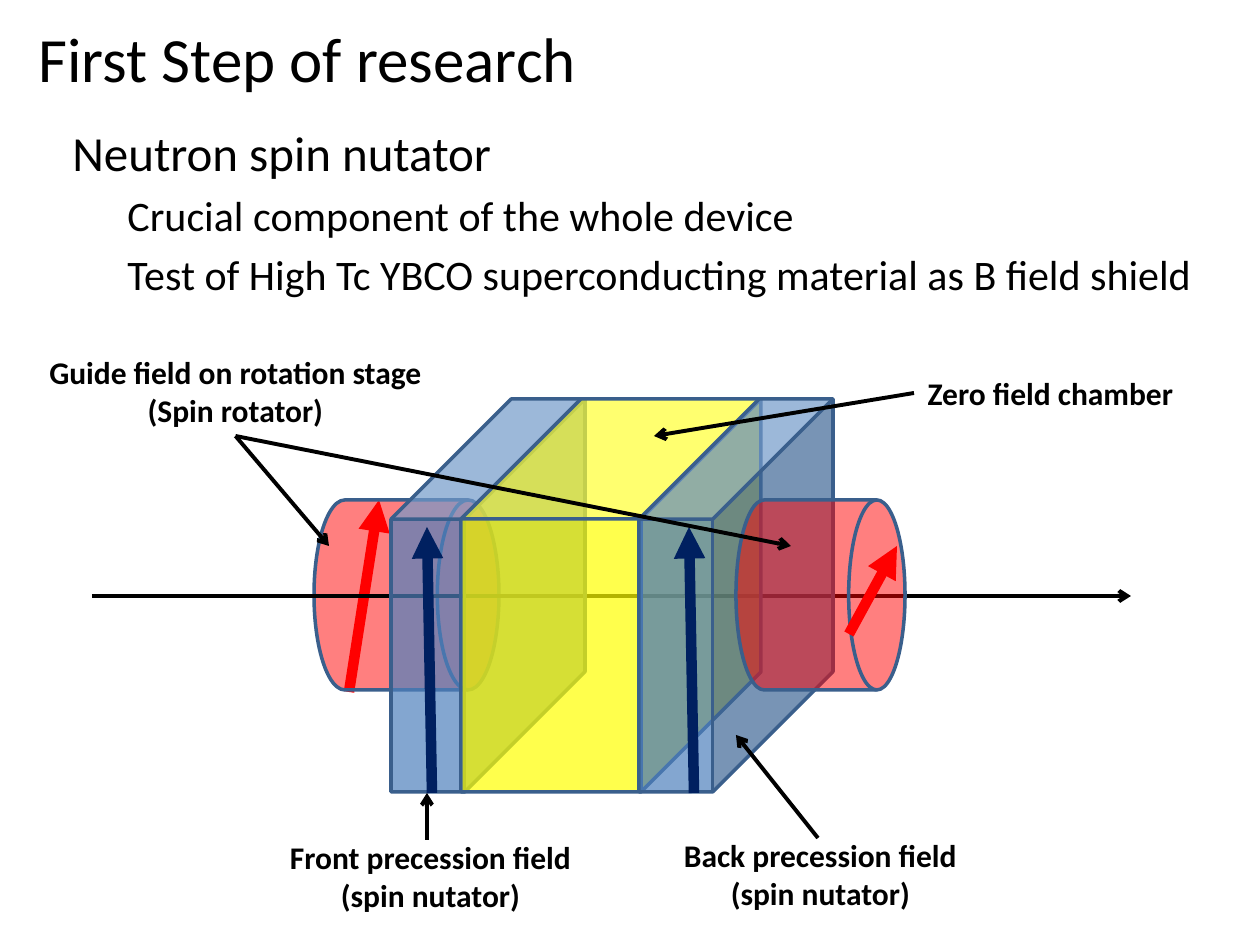
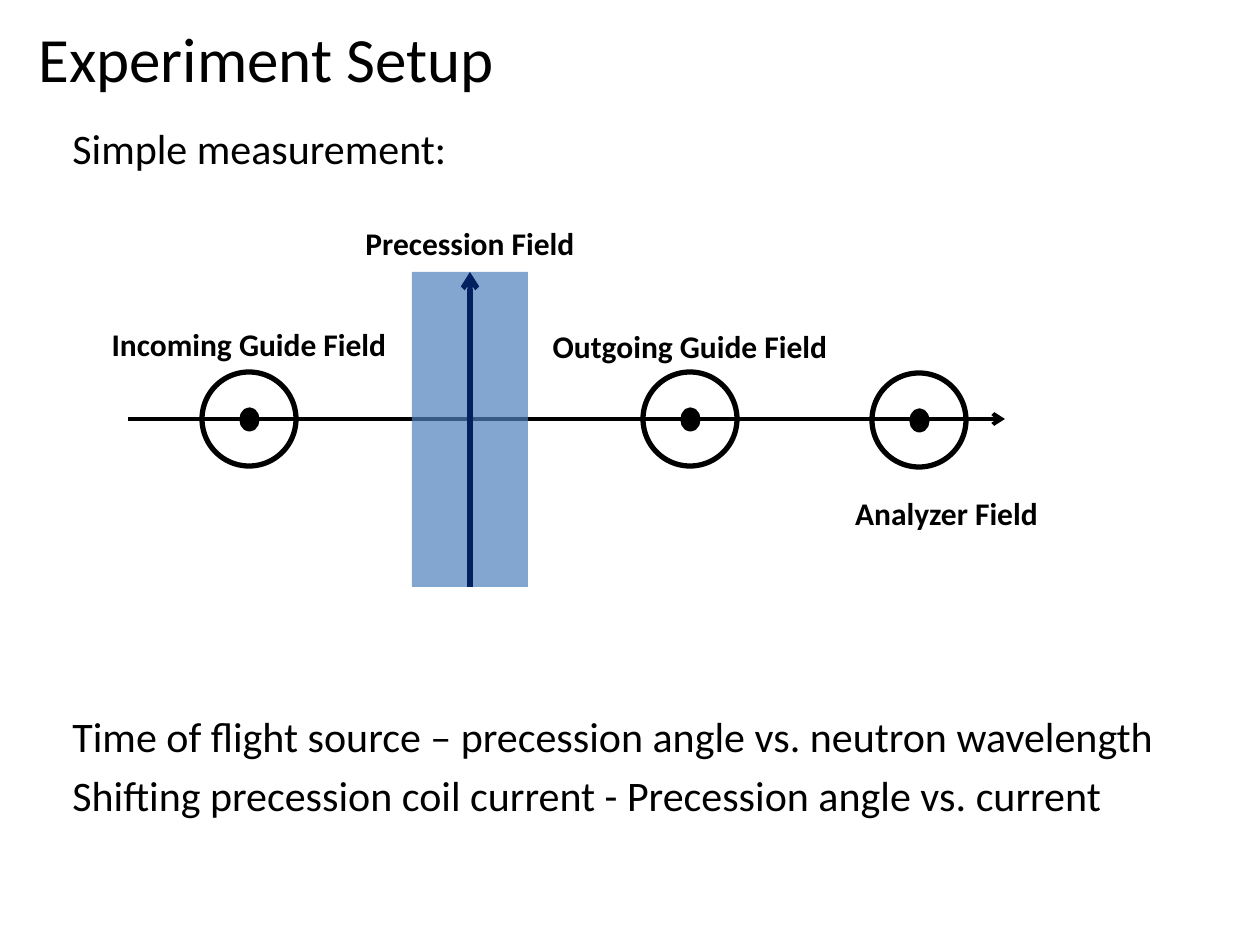
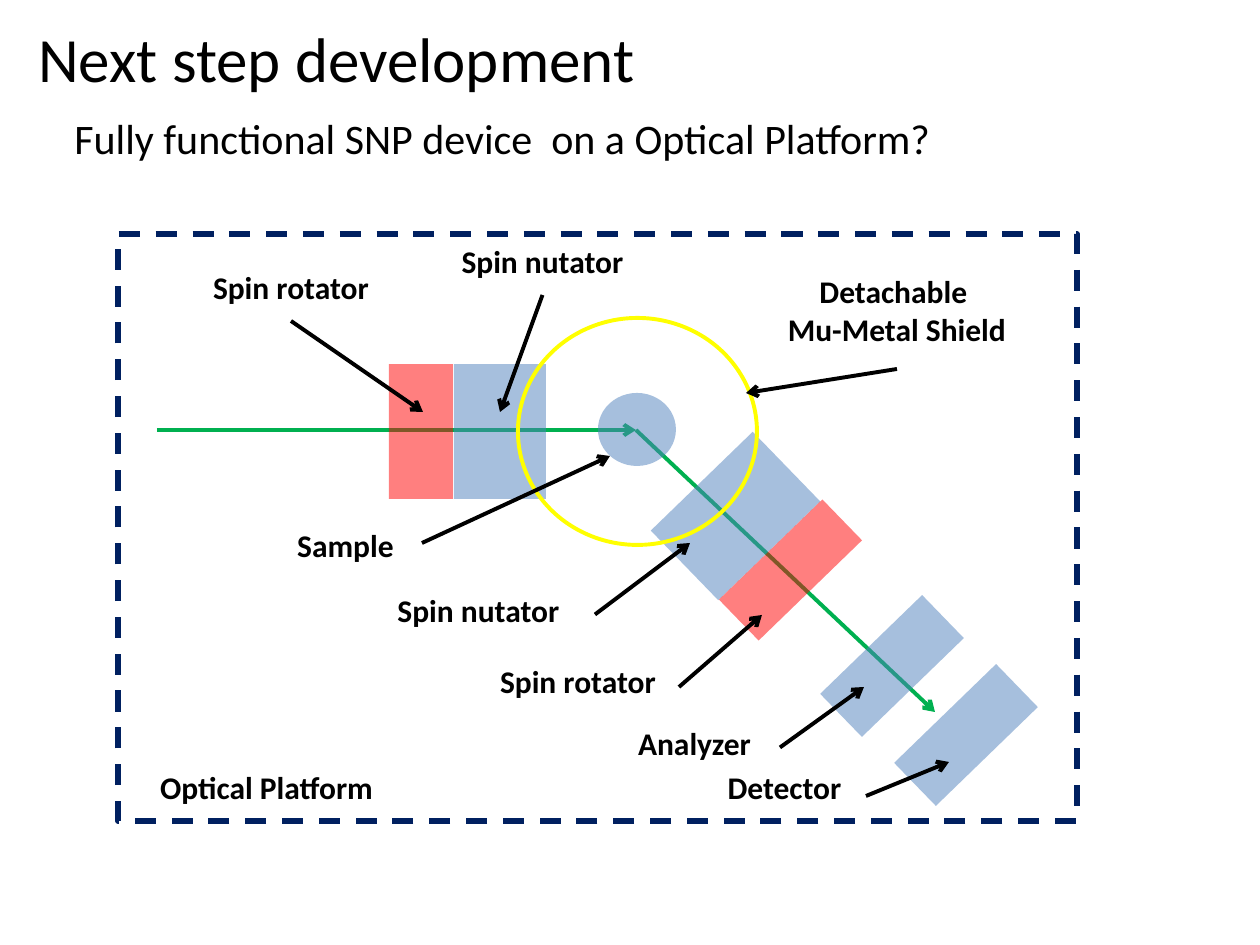
from lxml.etree import SubElement
from pptx import Presentation
from pptx.dml.color import RGBColor
from pptx.enum.dml import MSO_LINE
from pptx.enum.shapes import MSO_CONNECTOR, MSO_SHAPE
from pptx.enum.text import MSO_ANCHOR, PP_ALIGN
from pptx.oxml.ns import qn
from pptx.util import Emu, Pt

PX = 914400 / 126
FONT = "Calibri"
BLACK = RGBColor(0x00, 0x00, 0x00)
BLUE = RGBColor(0x4F, 0x81, 0xBD)
EDGE = RGBColor(0x3A, 0x5F, 0x8C)
NAVY = RGBColor(0x00, 0x20, 0x60)
RED = RGBColor(0xFF, 0x00, 0x00)
YELLOW = RGBColor(0xFF, 0xFF, 0x00)
GREEN = RGBColor(0x00, 0xB0, 0x50)


def add_shape(s, kind, box, fill=None, alpha=100, line=None, width=2):
    sp = s.shapes.add_shape(kind, *[Emu(round(v * PX)) for v in box])
    sp.shadow.inherit = False
    if fill is None:
        sp.fill.background()
    else:
        sp.fill.solid()
        sp.fill.fore_color.rgb = fill
        if alpha < 100:
            color = sp._element.spPr.find(qn("a:solidFill"))[0]
            SubElement(color, qn("a:alpha"), val=str(alpha * 1000))
    if line is None:
        sp.line.fill.background()
    else:
        sp.line.color.rgb = line
        sp.line.width = Pt(width)
    return sp


def add_arrow(s, ends, color=BLACK, width=2.25, head="arrow"):
    c = s.shapes.add_connector(MSO_CONNECTOR.STRAIGHT, *[Emu(round(v * PX)) for v in ends])
    c.line.color.rgb = color
    c.line.width = Pt(width)
    spPr = c._element.spPr
    SubElement(spPr.find(qn("a:ln")), qn("a:tailEnd"), type=head)
    SubElement(spPr, qn("a:effectLst"))
    return c


prs = Presentation()
prs.slide_width = Emu(round(1260 * PX))
prs.slide_height = Emu(round(945 * PX))
nutator, setup, platform = [prs.slides.add_slide(prs.slide_layouts[6]) for _ in range(3)]

texts = [
    (nutator, (26, 10, 1071, 95), 36, ["First Step of research"]),
    (nutator, (60, 116, 1178, 809), 28, [
        "Neutron spin nutator",
        "\tCrucial component of the whole device",
        "\tTest of High Tc YBCO superconducting material as B field shield",
    ]),
    (setup, (26, 10, 1071, 95), 36, ["Experiment Setup"]),
    (setup, (60, 116, 1134, 63), 24, ["Simple measurement:"]),
    (setup, (60, 704, 1134, 221), 24, [
        "Time of flight source – precession angle vs. neutron wavelength",
        "Shifting precession coil current - Precession angle vs. current",
    ]),
    (platform, (26, 10, 1071, 95), 36, ["Next step development"]),
    (platform, (62, 106, 1134, 809), 24, ["Fully functional SNP device  on a Optical Platform?"]),
]
for s, box, size, lines in texts:
    tf = s.shapes.add_textbox(*[Emu(round(v * PX)) for v in box]).text_frame
    tf.word_wrap = True
    if size == 36:
        tf.vertical_anchor = MSO_ANCHOR.MIDDLE
    for i, text in enumerate(lines):
        p = tf.add_paragraph() if i else tf.paragraphs[0]
        p.level = text.count("\t")
        p.text = text.strip()
        p.font.name = FONT
        p.font.size = Pt(size - 4 * p.level)
        p.font.color.rgb = BLACK
        if p.level:
            p._p.get_or_add_pPr().set("marL", str(round(55 * PX)))
        if i:
            p.space_before = Pt(4.8)

DRUM = MSO_SHAPE.FLOWCHART_DIRECT_ACCESS_STORAGE
add_arrow(nutator, (349, 692, 379, 500), RED, 6, "triangle")
add_shape(nutator, DRUM, (314, 500, 185, 190), RED, 50, EDGE)
add_arrow(nutator, (92, 596, 1131, 596))
for x, w, color, depth in [(391, 194, BLUE, 0.62), (461, 300, YELLOW, 0.4), (639, 194, BLUE, 0.62)]:
    cube = add_shape(nutator, MSO_SHAPE.CUBE, (x, 399, w, 393), color, 70, EDGE)
    cube.adjustments[0] = depth
add_shape(nutator, DRUM, (736, 500, 169, 190), RED, 50, EDGE)
add_arrow(nutator, (849, 634, 897, 546), RED, 6, "triangle")
for x in (427, 689):
    add_arrow(nutator, (x + 5, 793, x, 527), NAVY, 6, "triangle")

add_arrow(setup, (128, 419, 1005, 419))
field = add_shape(setup, MSO_SHAPE.RECTANGLE, (412, 272, 116, 315), BLUE, 70)
for x, y in [(202, 372), (643, 372), (872, 373)]:
    add_shape(setup, MSO_SHAPE.OVAL, (x, y, 94, 94), line=BLACK, width=3)
    add_shape(setup, MSO_SHAPE.OVAL, (x + 40, y + 38, 15, 19), BLACK, line=BLACK, width=3)
precession = add_arrow(setup, (470, 587, 470, 272), NAVY, 3)
precession.begin_connect(field, 2)
precession.end_connect(field, 0)

add_arrow(platform, (157, 430, 636, 430), GREEN)
add_arrow(platform, (636, 430, 935, 712), GREEN)
add_shape(platform, MSO_SHAPE.FLOWCHART_CONNECTOR, (598, 393, 78, 73), BLUE, 50)
for box, color, angle in [
    ((454, 364, 92, 135), BLUE, 0),
    ((389, 364, 64, 135), RED, 0),
    ((687, 445, 97, 142), BLUE, 45.9),
    ((762, 498, 57, 144), RED, 45.9),
    ((862, 595, 60, 142), BLUE, 45.9),
    ((936, 664, 60, 142), BLUE, 45.9),
]:
    add_shape(platform, MSO_SHAPE.RECTANGLE, box, color, 50).rotation = angle
frame = add_shape(platform, MSO_SHAPE.RECTANGLE, (118, 234, 959, 587), line=NAVY, width=3)
frame.line.dash_style = MSO_LINE.DASH
add_shape(platform, MSO_SHAPE.FLOWCHART_CONNECTOR, (518, 318, 239, 227), line=YELLOW, width=2.25)

labels = [
    (nutator, (35, 347, 401, 89), ["Guide field on rotation stage", "(Spin rotator)"],
     [((235, 436, 329, 546), 2), ((235, 436, 791, 546), 2)]),
    (nutator, (276, 832, 309, 89), ["Front precession field", "(spin nutator)"],
     [((427, 840, 427, 793), None)]),
    (nutator, (670, 830, 301, 89), ["Back precession field", "(spin nutator)"],
     [((818, 838, 736, 735), None)]),
    (nutator, (914, 368, 273, 50), ["Zero field chamber"], [((914, 391, 654, 436), 1)]),
    (setup, (98, 319, 302, 50), ["Incoming Guide Field"], []),
    (setup, (539, 321, 302, 50), ["Outgoing Guide Field"], []),
    (setup, (352, 218, 236, 50), ["Precession Field"], []),
    (setup, (842, 488, 209, 50), ["Analyzer Field"], []),
    (platform, (178, 262, 226, 59), ["Spin rotator"], [((290, 321, 423, 412), 2)]),
    (platform, (426, 236, 233, 59), ["Spin nutator"], [((542, 295, 500, 412), 2)]),
    (platform, (465, 656, 226, 59), ["Spin rotator"], [((679, 687, 762, 615), None)]),
    (platform, (362, 585, 233, 59), ["Spin nutator"], [((595, 615, 690, 543), 3)]),
    (platform, (609, 718, 171, 59), ["Analyzer"], [((780, 748, 864, 687), 3)]),
    (platform, (698, 762, 173, 59), ["Detector"], [((866, 796, 949, 762), None)]),
    (platform, (746, 266, 302, 103), ["Detachable ", "Mu-Metal Shield"],
     [((898, 369, 746, 393), 2)]),
    (platform, (270, 520, 151, 59), ["Sample"], [((422, 543, 610, 456), None)]),
    (platform, (118, 762, 297, 59), ["Optical Platform"], []),
]
for s, box, lines, arrows in labels:
    label = s.shapes.add_textbox(*[Emu(round(v * PX)) for v in box])
    tf = label.text_frame
    tf.word_wrap = False
    tf.text = "\n".join(lines)
    for p in tf.paragraphs:
        p.alignment = PP_ALIGN.CENTER
        p.font.name = FONT
        p.font.size = Pt(18)
        p.font.bold = True
        p.font.color.rgb = BLACK
    for ends, site in arrows:
        arrow = add_arrow(s, ends)
        if site is not None:
            arrow.begin_connect(label, site)

prs.save("out.pptx")
